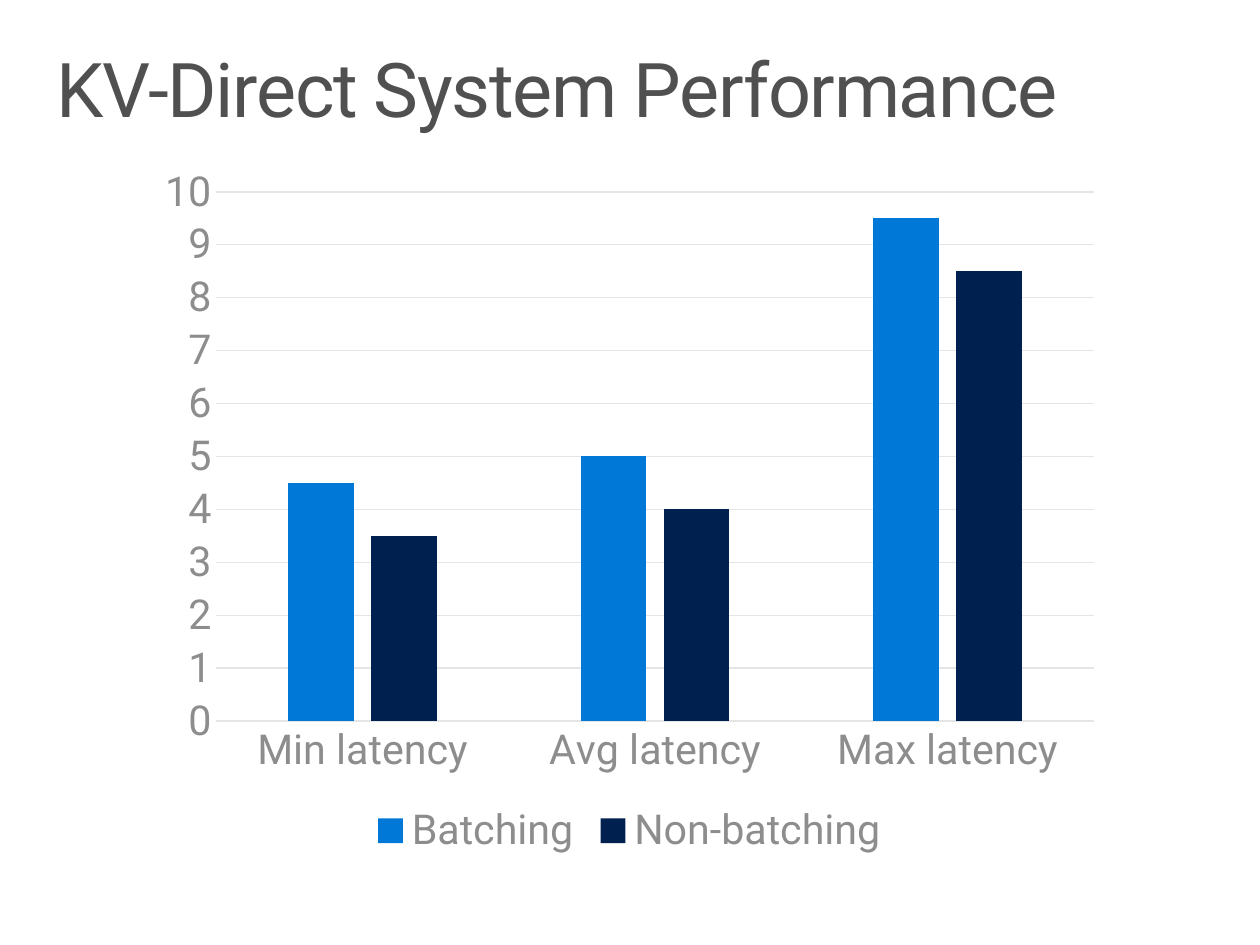
import pptx
import pptx.chart.data
import pptx.dml.color
import pptx.enum.chart
import pptx.enum.text
import pptx.util

Inches = pptx.util.Inches
Pt = pptx.util.Pt


def color(code):
    return pptx.dml.color.RGBColor.from_string(code)


def style(font, size, code):
    font.name = "Roboto"
    font.size = Pt(size)
    font.bold = False
    font.color.rgb = color(code)


deck = pptx.Presentation()
deck.slide_width = Inches(10.2)
deck.slide_height = Inches(7.65)
slide = deck.slides.add_slide(deck.slide_layouts[6])

title = slide.shapes.add_textbox(Inches(0.3), Inches(0.32), Inches(9.6), Inches(1))
frame = title.text_frame
frame.word_wrap = True
frame.vertical_anchor = pptx.enum.text.MSO_ANCHOR.TOP
frame.margin_left = frame.margin_right = Inches(0.16)
frame.margin_top = frame.margin_bottom = Inches(0.1)
line = frame.paragraphs[0]
line.line_spacing = 0.9
run = line.add_run()
run.text = "KV-Direct System Performance"
run.font._element.set("spc", "-80")
style(line.font, 44, "505050")

series = [
    ("Batching", (4.5, 5, 9.5), "0078D7"),
    ("Non-batching", (3.5, 4, 8.5), "002050"),
]
data = pptx.chart.data.CategoryChartData()
data.categories = ["Min latency", "Avg latency", "Max latency"]
for name, values, fill in series:
    data.add_series(name, values)

chart = slide.shapes.add_chart(
    pptx.enum.chart.XL_CHART_TYPE.COLUMN_CLUSTERED,
    Inches(1.18), Inches(1.24), Inches(7.83), Inches(5.75), data,
).chart
style(chart.font, 10, "505050")
chart.has_title = False
chart.has_legend = True
chart.legend.position = pptx.enum.chart.XL_LEGEND_POSITION.BOTTOM
chart.legend.include_in_layout = False
style(chart.legend.font, 24, "8D8D8D")

plot = chart.plots[0]
plot.gap_width = 219
plot.overlap = -27
plot.vary_by_categories = False
for bar, (name, values, fill) in zip(plot.series, series):
    bar.format.fill.solid()
    bar.format.fill.fore_color.rgb = color(fill)
    bar.invert_if_negative = False

for axis in (chart.category_axis, chart.value_axis):
    axis.major_tick_mark = pptx.enum.chart.XL_TICK_MARK.NONE
    axis.minor_tick_mark = pptx.enum.chart.XL_TICK_MARK.NONE
    style(axis.tick_labels.font, 24, "8D8D8D")

scale = chart.value_axis
scale.minimum_scale = 0
scale.maximum_scale = 10
scale.major_unit = 1
scale.has_major_gridlines = True
scale.format.line.fill.background()
for rule in (scale.major_gridlines.format.line, chart.category_axis.format.line):
    rule.color.rgb = color("E5E5E5")
    rule.width = Pt(0.75)

deck.save("out.pptx")
